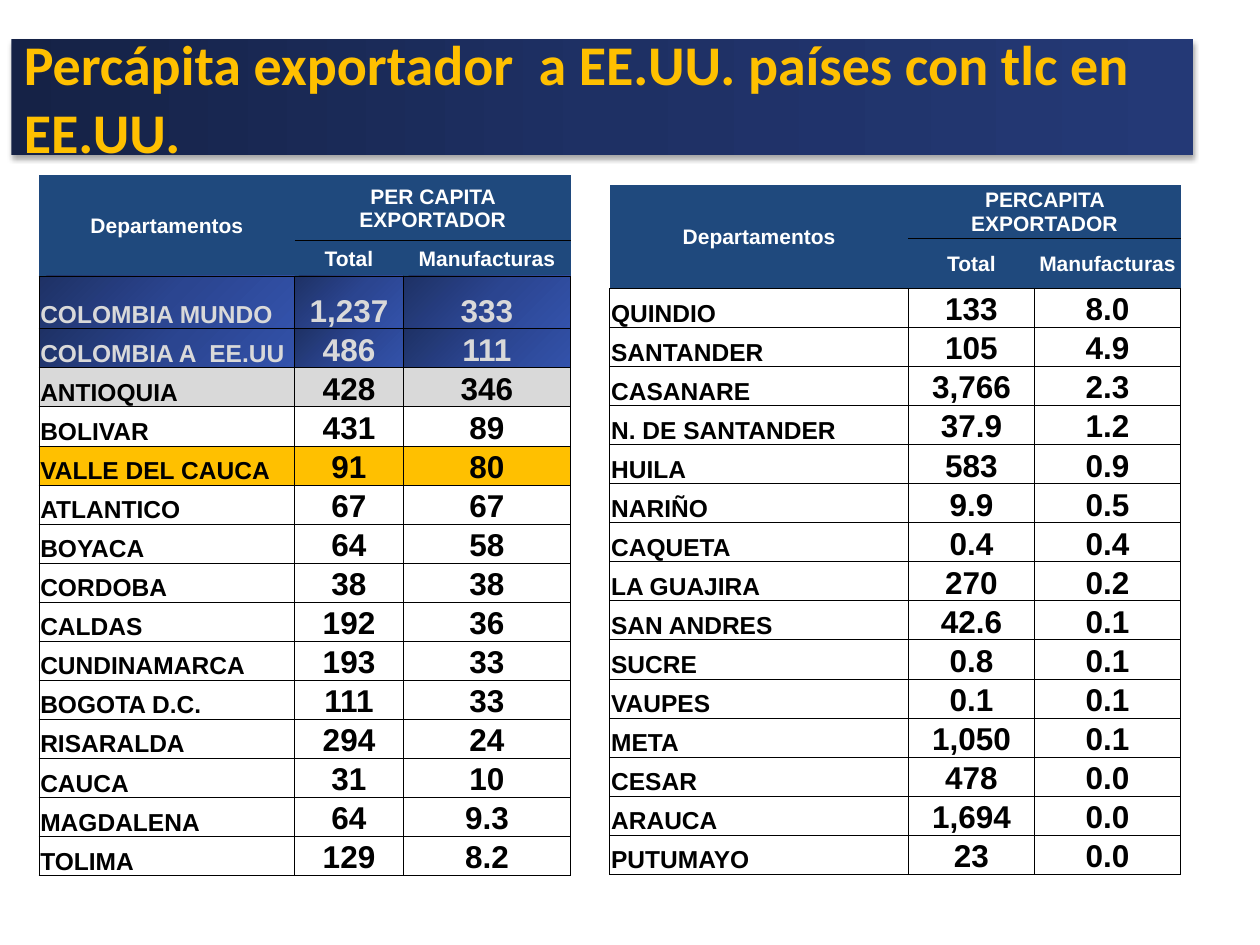
from copy import deepcopy

from pptx import Presentation
from pptx.dml.color import RGBColor
from pptx.enum.shapes import MSO_SHAPE
from pptx.enum.text import MSO_ANCHOR, PP_ALIGN
from pptx.oxml import parse_xml
from pptx.oxml.ns import nsdecls, qn
from pptx.util import Inches, Pt

WHITE = RGBColor(0xFF, 0xFF, 0xFF)
BLACK = RGBColor(0, 0, 0)
GRAY = RGBColor(0xD9, 0xD9, 0xD9)
GOLD = RGBColor(0xFF, 0xC0, 0x00)
HEADER_BLUE = RGBColor(0x1F, 0x49, 0x7D)
TITLE_BLUES = [RGBColor(0x15, 0x22, 0x46), RGBColor(0x1E, 0x30, 0x64), RGBColor(0x24, 0x39, 0x76)]
ROW_BLUES = [RGBColor(0x1E, 0x31, 0x65), RGBColor(0x2B, 0x45, 0x90), RGBColor(0x33, 0x52, 0xAB)]
PLAIN_TABLE_STYLE = "{2D5ABB26-0587-4C30-8999-92F81FD0307C}"
ROW_HEIGHT = 0.31

TITLE = "Percápita exportador  a EE.UU. países con tlc en EE.UU."
TABLES = [
    {
        "left": 0.31, "top": 1.39, "columns": [2.03, 0.86, 1.33],
        "first_heights": [0.52, 0.28, 0.42], "heading": "PER CAPITA EXPORTADOR",
        "rows": [
            ("COLOMBIA MUNDO", "1,237", "333"), ("COLOMBIA A  EE.UU", "486", "111"),
            ("ANTIOQUIA", "428", "346"), ("BOLIVAR", "431", "89"),
            ("VALLE DEL CAUCA", "91", "80"), ("ATLANTICO", "67", "67"),
            ("BOYACA", "64", "58"), ("CORDOBA", "38", "38"),
            ("CALDAS", "192", "36"), ("CUNDINAMARCA", "193", "33"),
            ("BOGOTA D.C.", "111", "33"), ("RISARALDA", "294", "24"),
            ("CAUCA", "31", "10"), ("MAGDALENA", "64", "9.3"), ("TOLIMA", "129", "8.2"),
        ],
    },
    {
        "left": 4.84, "top": 1.47, "columns": [2.37, 1.0, 1.16],
        "first_heights": [0.42, 0.4], "heading": "PERCAPITA EXPORTADOR",
        "rows": [
            ("QUINDIO", "133", "8.0"), ("SANTANDER", "105", "4.9"),
            ("CASANARE", "3,766", "2.3"), ("N. DE SANTANDER", "37.9", "1.2"),
            ("HUILA", "583", "0.9"), ("NARIÑO", "9.9", "0.5"),
            ("CAQUETA", "0.4", "0.4"), ("LA GUAJIRA", "270", "0.2"),
            ("SAN ANDRES", "42.6", "0.1"), ("SUCRE", "0.8", "0.1"),
            ("VAUPES", "0.1", "0.1"), ("META", "1,050", "0.1"),
            ("CESAR", "478", "0.0"), ("ARAUCA", "1,694", "0.0"), ("PUTUMAYO", "23", "0.0"),
        ],
    },
]
# Department: (fill, text colour); a list of colours is a gradient
ROW_STYLES = {
    "COLOMBIA MUNDO": (ROW_BLUES, GRAY),
    "COLOMBIA A  EE.UU": (ROW_BLUES, GRAY),
    "ANTIOQUIA": (GRAY, BLACK),
    "VALLE DEL CAUCA": (GOLD, BLACK),
    "CAUCA": (WHITE, BLACK),
    "NARIÑO": (WHITE, BLACK),
}


def fill_gradient(fill, element, colors, angle):
    """Spread three colours evenly; the angle runs counter-clockwise."""
    fill.gradient()
    fill.gradient_angle = angle
    stop_list = element.find(".//" + qn("a:gsLst"))
    stop_list.insert(1, deepcopy(stop_list[0]))
    for stop, color, position in zip(fill.gradient_stops, colors, (0, 0.5, 1)):
        stop.color.rgb = color
        stop.position = position


def set_borders(cell, sides):
    """Draw thin black lines on the given sides (L, R, T, B) and none elsewhere."""
    properties = cell._tc.get_or_add_tcPr()
    for index, side in enumerate("LRTB"):
        color = '<a:solidFill><a:srgbClr val="000000"/></a:solidFill>'
        paint = color if side in sides else "<a:noFill/>"
        properties.insert(index, parse_xml(
            f'<a:ln{side} {nsdecls("a")} w="6350">{paint}</a:ln{side}>'))


def style_text(frame, size, font_name, color, alignment):
    para = frame.paragraphs[0]
    para.alignment = alignment
    for span in para.runs:
        span.font.size = Pt(size)
        span.font.name = font_name
        span.font.bold = True
        span.font.color.rgb = color


def write_cell(cell, text, size, color, fill, sides, anchor, alignment=PP_ALIGN.CENTER):
    cell.text_frame.text = text
    style_text(cell.text_frame, size, "Arial", color, alignment)
    cell.vertical_anchor = anchor
    cell.margin_left = cell.margin_right = cell.margin_top = Inches(0.01)
    cell.margin_bottom = 0
    if fill is None:
        cell.fill.background()
    elif isinstance(fill, list):
        fill_gradient(cell.fill, cell._tc, fill, 315)
    else:
        cell.fill.solid()
        cell.fill.fore_color.rgb = fill
    set_borders(cell, sides)


def add_department_table(page, data):
    header = [("Departamentos", data["heading"], ""), ("", "Total", "Manufacturas")]
    row_count = len(header) + len(data["rows"])
    first = data["first_heights"]
    heights = first + [ROW_HEIGHT] * (row_count - len(first))
    frame = page.shapes.add_table(
        row_count, len(data["columns"]), Inches(data["left"]), Inches(data["top"]),
        Inches(sum(data["columns"])), Inches(sum(heights)))
    table = frame.table
    table.first_row = table.horz_banding = False
    table._tbl.tblPr.find(qn("a:tableStyleId")).text = PLAIN_TABLE_STYLE
    for column, width in zip(table.columns, data["columns"]):
        column.width = Inches(width)
    for row, height in zip(table.rows, heights):
        row.height = Inches(height)

    for r, labels in enumerate(header):
        for c, label in enumerate(labels):
            sides = "TB" if r and c else "B"
            write_cell(table.cell(r, c), label, 12, WHITE, HEADER_BLUE, sides, MSO_ANCHOR.MIDDLE)
    table.cell(0, 0).merge(table.cell(1, 0))
    table.cell(0, 1).merge(table.cell(0, 2))

    for r, values in enumerate(data["rows"], len(header)):
        fill, color = ROW_STYLES.get(values[0], (None, BLACK))
        for c, value in enumerate(values):
            size, alignment = (18, PP_ALIGN.CENTER) if c else (14, PP_ALIGN.LEFT)
            write_cell(table.cell(r, c), value, size, color, fill, "LRTB",
                       MSO_ANCHOR.BOTTOM, alignment)


def add_title(page):
    box = page.shapes.add_shape(
        MSO_SHAPE.RECTANGLE, Inches(0.09), Inches(0.31), Inches(9.38), Inches(0.92))
    fill_gradient(box.fill, box._element, TITLE_BLUES, 0)
    box.line.fill.background()
    box._element.spPr.append(parse_xml(
        f'<a:effectLst {nsdecls("a")}><a:outerShdw blurRad="38100" dist="25400" dir="5400000" '
        'rotWithShape="0"><a:srgbClr val="000000"><a:alpha val="35000"/></a:srgbClr>'
        '</a:outerShdw></a:effectLst>'))
    box.text_frame.text = TITLE
    box.text_frame.word_wrap = True
    box.text_frame.vertical_anchor = MSO_ANCHOR.MIDDLE
    style_text(box.text_frame, 32, "Calibri", GOLD, PP_ALIGN.LEFT)


def main():
    deck = Presentation()
    deck.slide_width, deck.slide_height = Inches(10), Inches(7.5)
    page = deck.slides.add_slide(deck.slide_layouts[6])
    for data in TABLES:
        add_department_table(page, data)
    add_title(page)
    deck.save("out.pptx")


if __name__ == "__main__":
    main()
